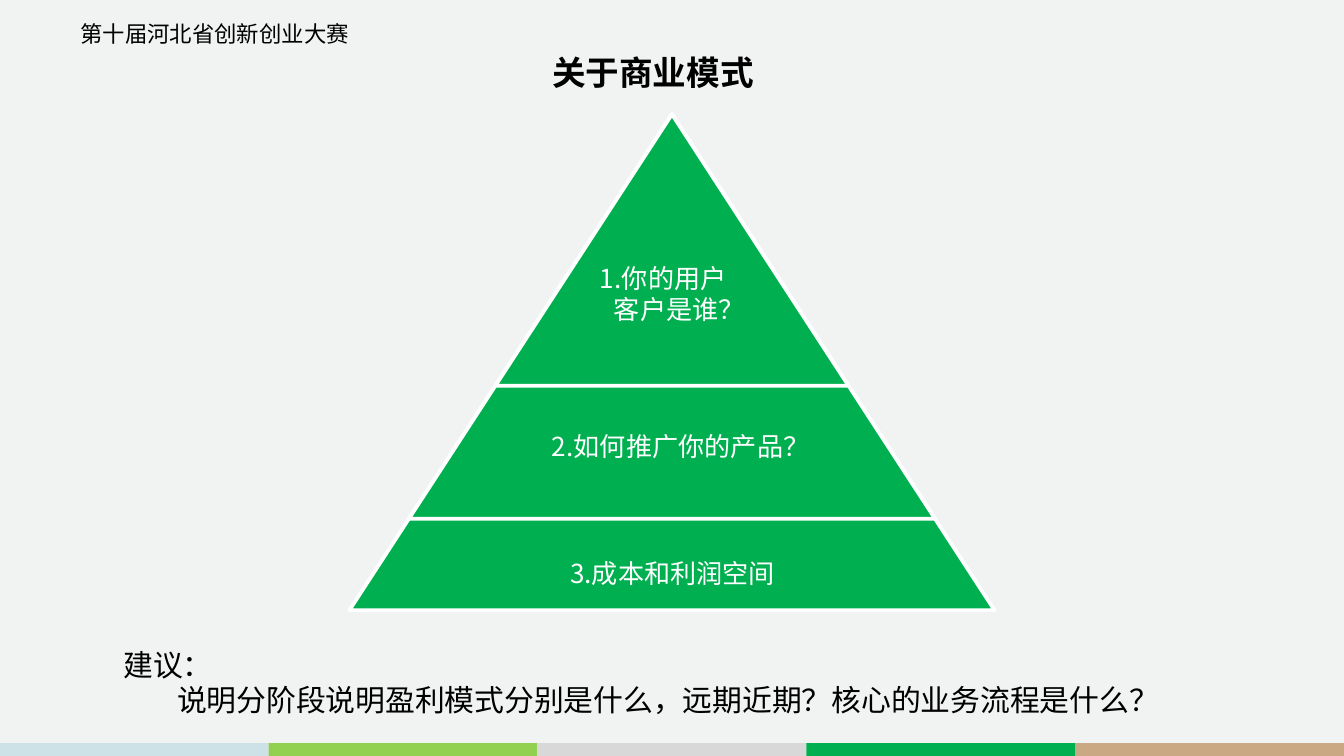
from pptx import Presentation
from pptx.dml.color import RGBColor
from pptx.enum.shapes import MSO_SHAPE as SHAPE
from pptx.enum.text import MSO_ANCHOR as ANCHOR, PP_ALIGN as ALIGN
from pptx.oxml.ns import qn
from pptx.util import Inches, Pt
from lxml import etree

CJK = "Noto Sans CJK SC"
GREEN, WHITE, BLACK = "00B050", "FFFFFF", "000000"


def rgb(value):
    """Turn a hex string into a colour."""
    return RGBColor.from_string(value)


def add_shape(s, kind, x, y, w, h, fill, line=None):
    """Add a filled preset shape, outlined if a line colour is given."""
    sp = s.shapes.add_shape(kind, Inches(x), Inches(y), Inches(w), Inches(h))
    sp.shadow.inherit = False
    sp.fill.solid()
    sp.fill.fore_color.rgb = rgb(fill)
    if line:
        sp.line.color.rgb = rgb(line)
        sp.line.width = Pt(2)
    else:
        sp.line.fill.background()
    return sp


def add_text(s, x, y, w, h, lines, size, color=BLACK, font=CJK, bold=False,
             align=ALIGN.LEFT, anchor=ANCHOR.TOP, spacing=None):
    """Add a text box from (text, left indent in inches) lines."""
    sp = s.shapes.add_textbox(Inches(x), Inches(y), Inches(w), Inches(h))
    tf = sp.text_frame
    tf.word_wrap = True
    tf.vertical_anchor = anchor
    for i, (text, indent) in enumerate(lines):
        p = tf.add_paragraph() if i else tf.paragraphs[0]
        p.alignment = align
        if spacing:
            p.line_spacing = spacing
        if indent:
            p._p.get_or_add_pPr().set("marL", str(Inches(indent)))
        r = p.add_run()
        r.text = text
        r.font.size = Pt(size)
        r.font.bold = bold
        r.font.color.rgb = rgb(color)
        r.font.name = font
        etree.SubElement(r._r.get_or_add_rPr(), qn("a:ea"), typeface=CJK)
    return sp


def add_footer_bar(s, x, y, w, h):
    """Draw the strip of equal coloured blocks."""
    colors = ["CDE2E7", "92D050", "D8D8D8", GREEN, "CAA884"]
    step = w / len(colors)
    for i, color in enumerate(colors):
        add_shape(s, SHAPE.RECTANGLE, x + i * step, y, step, h, color)


def add_header(s, x, y, w):
    """Place the contest name and the slide title."""
    add_text(s, x, y, 5.56, 0.3, [("第十届河北省创新创业大赛", 0)], 12, font="Calibri")
    add_text(s, x + 3.51, y + 0.27, w, 0.39, [("关于商业模式", 0)], 18,
             bold=True, spacing=0.9)


def add_pyramid(s, x, y, w, h):
    """Stack triangles sharing one apex and label the three levels."""
    for level in (h, 3.01, 2.02):
        width = w * level / h
        add_shape(s, SHAPE.ISOSCELES_TRIANGLE, x + (w - width) / 2, y,
                  width, level, GREEN, WHITE)
    labels = [
        (0.79, 1.1, 0.47, [("1.你的用户", 0), ("客户是谁？", 0.24)]),
        (0.92, 2.16, 0.62, [("2.如何推广你的产品？", 0)]),
        (0.86, 3.18, 0.47, [("3.成本和利润空间", 0)]),
    ]
    for dx, dy, height, lines in labels:
        add_text(s, x + dx, y + dy, 3.09, height, lines, 14, WHITE,
                 align=ALIGN.CENTER, anchor=ANCHOR.MIDDLE)


def add_advice(s, x, y, w, h):
    """Place the advice with its indented second line."""
    add_text(s, x, y, w, h, [
        ("建议：", 0),
        ("说明分阶段说明盈利模式分别是什么，远期近期？核心的业务流程是什么？", 0.4),
    ], 16)


def main():
    """Build and save the slide."""
    prs = Presentation()
    prs.slide_width = Inches(10)
    prs.slide_height = prs.slide_width * 9 // 16
    s = prs.slides.add_slide(prs.slide_layouts[6])
    s.background.fill.solid()
    s.background.fill.fore_color.rgb = rgb("F1F3F2")
    add_footer_bar(s, 0, 5.53, 10, 0.1)
    add_header(s, 0.5, 0.1, 4.12)
    add_pyramid(s, 2.6, 0.85, 4.8, 3.69)
    add_advice(s, 0.82, 4.76, 8.06, 0.64)
    prs.save("out.pptx")


if __name__ == "__main__":
    main()
